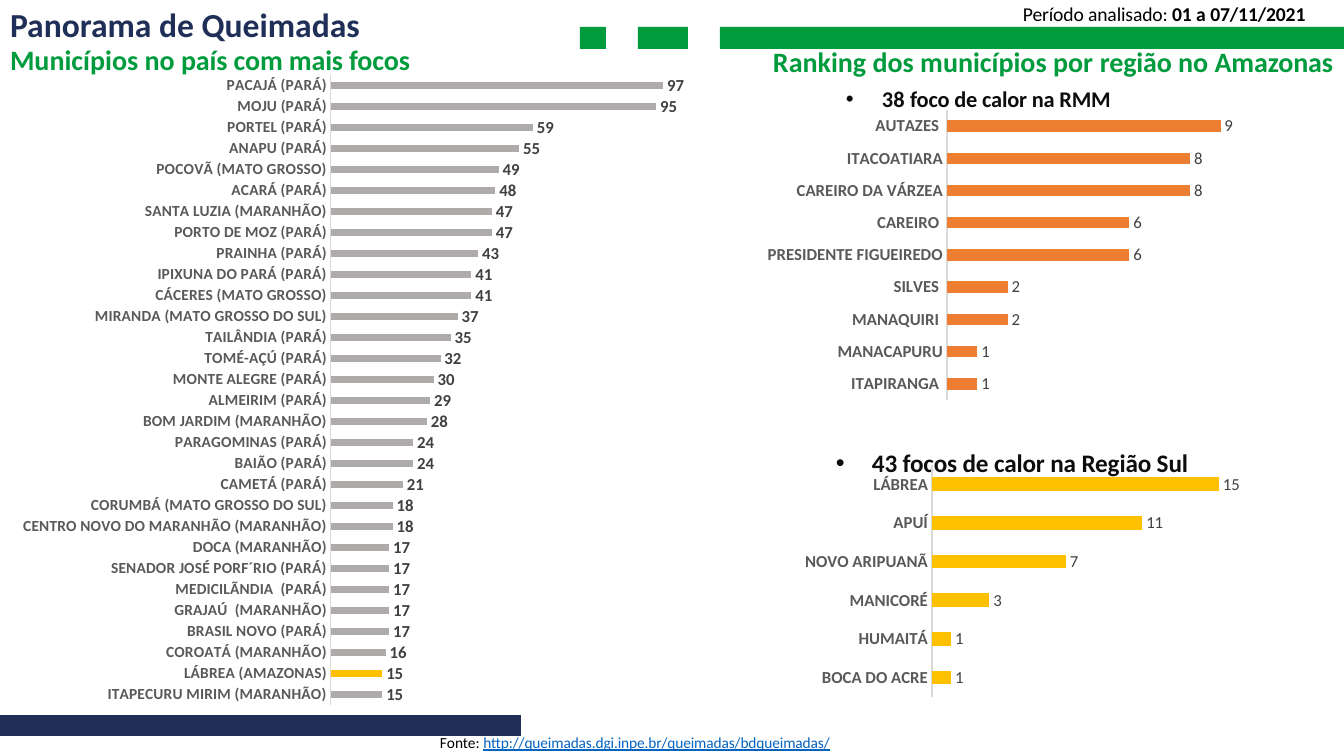
from lxml.etree import SubElement
from pptx import Presentation
from pptx.chart.data import CategoryChartData
from pptx.dml.color import RGBColor
from pptx.enum.chart import XL_CHART_TYPE as ChartType
from pptx.enum.chart import XL_LABEL_POSITION as LabelPosition
from pptx.enum.chart import XL_TICK_MARK as TickMark
from pptx.enum.shapes import MSO_SHAPE as Preset
from pptx.enum.text import MSO_ANCHOR as Anchor
from pptx.oxml import parse_xml
from pptx.oxml.ns import nsdecls, qn
from pptx.util import Emu, Pt

EMU_PER_PX = 914400 / 100.8
COLORS = {
    "green": "009B3C", "navy": "1F2E57", "title": "202F58", "black": "000000",
    "ink": "0D0D0D", "link": "0563C1", "axis": "D9D9D9", "category": "595959",
    "label": "404040", "gray": "AFABAB", "orange": "ED7D31", "yellow": "FFC000",
}

COUNTRY = [
    ("ITAPECURU MIRIM (MARANHÃO)", 15), ("LÁBREA (AMAZONAS)", 15),
    ("COROATÁ (MARANHÃO)", 16), ("BRASIL NOVO (PARÁ)", 17),
    ("GRAJAÚ  (MARANHÃO)", 17), ("MEDICILÃNDIA  (PARÁ)", 17),
    ("SENADOR JOSÉ PORF´RIO (PARÁ)", 17), (" DOCA (MARANHÃO)", 17),
    ("CENTRO NOVO DO MARANHÃO (MARANHÃO)", 18),
    ("CORUMBÁ (MATO GROSSO DO SUL)", 18), ("CAMETÁ (PARÁ)", 21),
    ("BAIÃO (PARÁ)", 24), ("PARAGOMINAS (PARÁ)", 24),
    ("BOM JARDIM (MARANHÃO)", 28), ("ALMEIRIM (PARÁ)", 29),
    ("MONTE ALEGRE (PARÁ)", 30), ("TOMÉ-AÇÚ (PARÁ)", 32),
    ("TAILÂNDIA (PARÁ)", 35), ("MIRANDA (MATO GROSSO DO SUL)", 37),
    ("CÁCERES (MATO GROSSO)", 41), ("IPIXUNA DO PARÁ (PARÁ)", 41),
    ("PRAINHA (PARÁ)", 43), ("PORTO DE MOZ (PARÁ)", 47),
    ("SANTA LUZIA (MARANHÃO)", 47), ("ACARÁ (PARÁ)", 48),
    ("POCOVÃ (MATO GROSSO)", 49), ("ANAPU (PARÁ)", 55),
    ("PORTEL (PARÁ)", 59), ("MOJU (PARÁ)", 95), ("PACAJÁ (PARÁ)", 97),
]
METRO = [
    ("ITAPIRANGA ", 1), ("MANACAPURU", 1), ("MANAQUIRI ", 2), ("SILVES ", 2),
    ("PRESIDENTE FIGUEIREDO", 6), ("CAREIRO ", 6), ("CAREIRO DA VÁRZEA", 8),
    ("ITACOATIARA", 8), ("AUTAZES ", 9),
]
SOUTH = [
    ("BOCA DO ACRE", 1), ("HUMAITÁ", 1), ("MANICORÉ", 3),
    ("NOVO ARIPUANÃ", 7), ("APUÍ", 11), ("LÁBREA", 15),
]


def px(length):
    return Emu(round(length * EMU_PER_PX))


def rgb(name):
    return RGBColor.from_string(COLORS[name])


def style_font(font, size, color, bold=False, underline=None):
    font.name, font.size, font.bold = "Calibri", Pt(size), bold
    font.color.rgb = rgb(color)
    font.underline = underline


class Page:
    """The current slide and the style shared by its elements."""

    def __init__(self, deck):
        self.shapes = deck.slides.add_slide(deck.slide_layouts[6]).shapes

    def band(self, left, top, width, height, color):
        shape = self.shapes.add_shape(Preset.RECTANGLE, *map(px, (left, top, width, height)))
        shape.shadow.inherit = False
        shape.fill.solid()
        shape.fill.fore_color.rgb = rgb(color)
        shape.line.fill.background()

    def add_text(self, text, place, before=1, line=None, inset=1, anchor=Anchor.TOP,
                 indent=1, bullet=False, spacing=0, **font):
        """Add one paragraph; text is a string or a list of (string, overrides)."""
        box = self.shapes.add_textbox(*map(px, place))
        frame = box.text_frame
        frame.word_wrap = True
        frame.vertical_anchor = anchor
        frame.margin_left = frame.margin_right = frame.margin_bottom = 0
        frame.margin_top = px(inset)
        para = frame.paragraphs[0]
        para.space_before = Pt(before)
        if line:
            para.line_spacing = Pt(line)
        properties = para._p.get_or_add_pPr()
        properties.set("marL", str(px(indent)))
        if bullet:
            properties.set("indent", str(px(-36)))
            SubElement(properties, qn("a:buFont"), typeface="Arial")
            SubElement(properties, qn("a:buChar"), char="•")
        for content, changes in [(text, {})] if isinstance(text, str) else text:
            look = {"spacing": spacing, **font, **changes}
            span = para.add_run()
            span.text = content
            span._r.get_or_add_rPr().set("spc", str(look.pop("spacing")))
            style_font(span.font, **look)

    def bar_chart(self, rows, place, plot, top_value, color, size=12, bold_labels=False,
                  highlights=None):
        """Draw a bar chart at place, with its bars inside the plot rectangle."""
        data = CategoryChartData()
        data.categories = [name for name, _ in rows]
        data.add_series("Focos", [value for _, value in rows])
        chart = self.shapes.add_chart(ChartType.BAR_CLUSTERED, *map(px, place), data).chart
        chart.has_legend = chart.has_title = False
        style_font(chart.font, 10, "black")
        chart.element.find(qn("c:chart")).addnext(parse_xml(
            f'<c:spPr {nsdecls("c", "a")}><a:noFill/><a:ln><a:noFill/></a:ln></c:spPr>'))

        left, top, width, height = place
        fractions = {"x": (plot[0] - left) / width, "y": (plot[1] - top) / height,
                     "w": plot[2] / width, "h": plot[3] / height}
        area = chart.element.find(".//" + qn("c:plotArea"))
        for old in area.findall(qn("c:layout")):
            area.remove(old)
        layout = parse_xml(f'<c:layout {nsdecls("c")}><c:manualLayout/></c:layout>')
        area.insert(0, layout)
        settings = {"layoutTarget": "inner", "xMode": "edge", "yMode": "edge",
                    **{key: f"{part:.4f}" for key, part in fractions.items()}}
        for key, value in settings.items():
            SubElement(layout[0], qn("c:" + key), val=value)

        names, values = chart.category_axis, chart.value_axis
        names.major_tick_mark = names.minor_tick_mark = TickMark.NONE
        names.has_major_gridlines = values.has_major_gridlines = False
        names.format.line.color.rgb = rgb("axis")
        names.format.line.width = Pt(0.75)
        style_font(names.tick_labels.font, size, "category", bold=True)
        values.minimum_scale, values.maximum_scale = 0, top_value
        values.visible = False

        bars = chart.plots[0]
        bars.gap_width, bars.vary_by_categories = 182, False
        series = bars.series[0]
        fills = [series.format.fill]
        fills += [series.points[index].format.fill for index in highlights or {}]
        for fill, tone in zip(fills, [color, *(highlights or {}).values()]):
            fill.solid()
            fill.fore_color.rgb = rgb(tone)
        labels = series.data_labels
        labels.show_value = True
        labels.position = LabelPosition.OUTSIDE_END
        style_font(labels.font, 12, "label", bold=bold_labels)


def main():
    deck = Presentation()
    deck.slide_width, deck.slide_height = px(1344), px(756)
    page = Page(deck)

    for left, width in ((720, 624), (638, 50), (580, 26)):
        page.band(left, 27, width, 22, "green")
    page.band(0, 715, 521, 21, "navy")

    heading = {"size": 20, "color": "green", "bold": True}
    page.add_text("Panorama de Queimadas", (9, -6, 440, 51), before=7.5, inset=10,
                  anchor=Anchor.MIDDLE, size=24, color="title", bold=True)
    page.add_text([("Municípios no", {}), (" país com mais focos", {"spacing": -10})],
                  (9, 42, 405, 36), **heading)
    page.add_text([("Período analisado: ", {}), ("01 ", {"bold": True}),
                   ("a ", {"bold": True, "spacing": 0}), ("07/11/2021", {"bold": True})],
                  (1022, 1, 322, 25), size=14, color="black", spacing=-10)
    page.add_text([("Fonte: ", {}),
                   ("http://queimadas.dgi.inpe.br/queimadas/bdqueimadas/",
                    {"color": "link", "underline": True, "spacing": -10})],
                  (439, 732, 400, 21), size=11, color="black")
    page.add_text([("Ranking dos municípios por ", {}), ("região ", {"spacing": -10}),
                   ("no ", {}), ("Amazonas", {"spacing": -10})],
                  (772, 45, 570, 34), line=23.2, **heading)
    page.add_text([("38 ", {"spacing": 10}), ("foco de calor na RMM", {})],
                  (844, 84, 422, 28), before=0, indent=38, bullet=True,
                  size=16, color="ink", bold=True, spacing=-10)
    page.add_text("43 focos de calor na Região Sul", (772, 451, 432, 30), before=0,
                  line=18.4, indent=100, bullet=True, size=18, color="ink", bold=True,
                  spacing=-10)

    page.bar_chart(SOUTH, (796, 461, 452, 241), (932, 465, 306, 232), 16, "yellow")
    page.bar_chart(METRO, (757, 104, 504, 302), (947, 110, 304, 290), 10, "orange")
    page.bar_chart(COUNTRY, (9, 61, 749, 656), (331, 75, 411, 630), 120, "gray", size=11,
                   bold_labels=True, highlights={1: "yellow"})
    deck.save("out.pptx")


if __name__ == "__main__":
    main()
